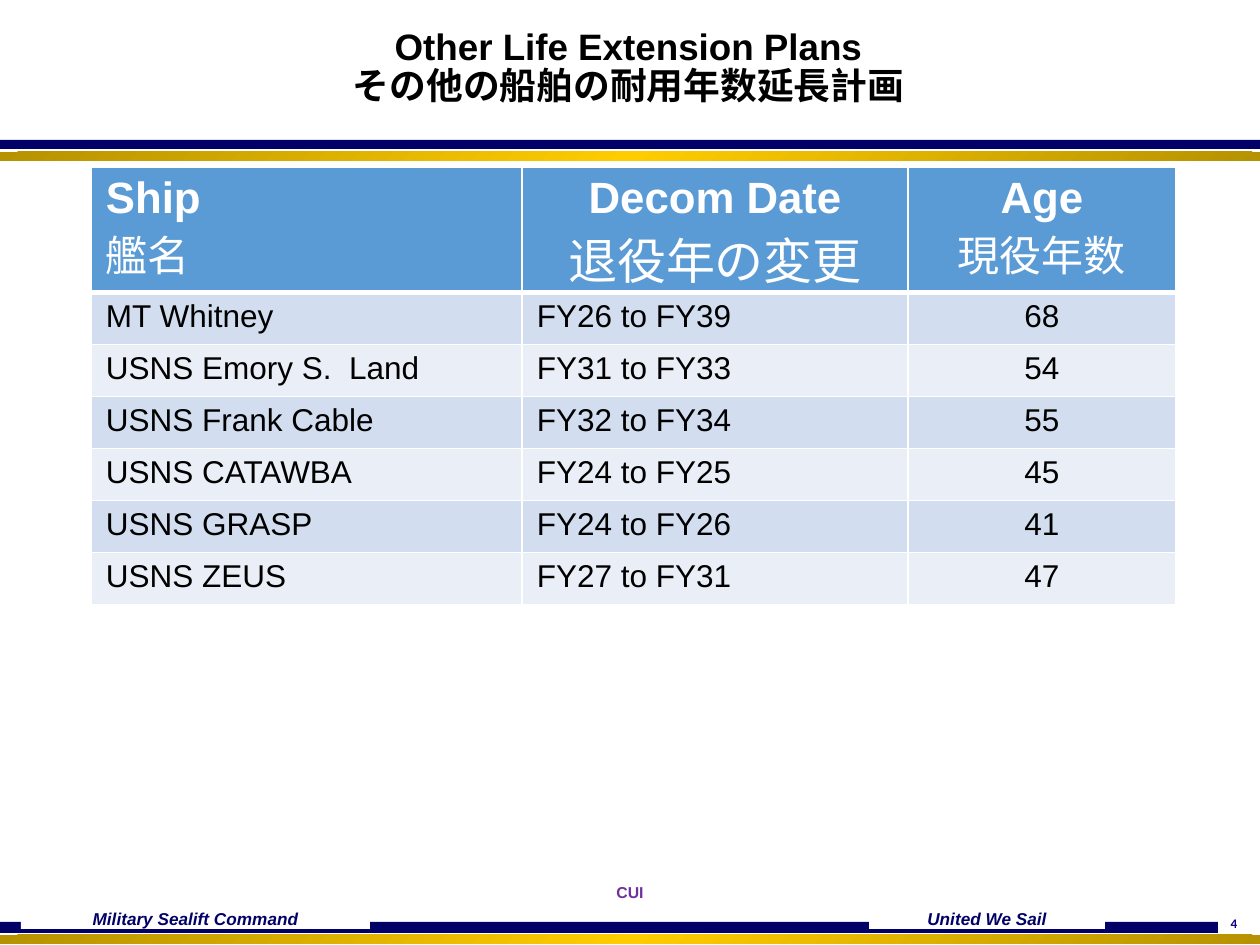
from dataclasses import dataclass

from lxml.etree import SubElement
from pptx import Presentation
from pptx.dml.color import RGBColor
from pptx.enum.shapes import MSO_SHAPE as Shape
from pptx.enum.text import MSO_ANCHOR as Anchor, PP_ALIGN as Align
from pptx.oxml import parse_xml
from pptx.oxml.ns import nsdecls, qn
from pptx.util import Emu, Pt

PX = 914400 / 126
COLORS = {
    "navy": "000066", "gold": "FFCC00", "bronze": "B69200", "white": "FFFFFF",
    "black": "000000", "purple": "7030A0", "number": "110189",
    "header": "5B9BD5", "band": "D2DEEF", "light": "EAEFF7",
}


@dataclass
class Box:
    x: int
    y: int
    w: int
    h: int

    def emu(self) -> list[Emu]:
        return [px(v) for v in (self.x, self.y, self.w, self.h)]


@dataclass
class Style:
    size: float
    color: str = "black"
    bold: bool = False
    italic: bool = False
    name: str = "Arial"
    align: Align = Align.CENTER
    spacing: float = 1.0


@dataclass
class Heading:
    english: str
    japanese: str
    japanese_size: int
    width: int
    align: Align
    body_align: Align


def px(value: int) -> Emu:
    return Emu(round(value * PX))


def rgb(name: str) -> RGBColor:
    return RGBColor.from_string(COLORS[name])


def set_text(p, text: str, style: Style) -> None:
    p.text = text
    p.alignment = style.align
    p.line_spacing = style.spacing
    f = p.font
    f.size, f.name = Pt(style.size), style.name
    f.bold, f.italic = style.bold, style.italic
    f.color.rgb = rgb(style.color)


def add_bar(s, box: Box, color: str):
    sp = s.shapes.add_shape(Shape.RECTANGLE, *box.emu())
    sp.shadow.inherit = False
    sp.line.fill.background()
    sp.fill.solid()
    sp.fill.fore_color.rgb = rgb(color)
    return sp


def add_gold_bar(s, box: Box) -> None:
    sp = add_bar(s, box, "gold")
    stops = "".join(
        f'<a:gs pos="{pos}"><a:srgbClr val="{COLORS[color]}"/></a:gs>'
        for pos, color in ((0, "bronze"), (50000, "gold"), (100000, "bronze")))
    solid = sp.element.spPr.find(qn("a:solidFill"))
    solid.getparent().replace(solid, parse_xml(
        f'<a:gradFill {nsdecls("a")} rotWithShape="1"><a:gsLst>{stops}</a:gsLst>'
        '<a:lin ang="2700000" scaled="1"/></a:gradFill>'))


def add_label(s, box: Box, text: str) -> None:
    tf = add_bar(s, box, "white").text_frame
    tf.word_wrap = True
    tf.vertical_anchor = Anchor.MIDDLE
    tf.margin_top = tf.margin_bottom = 0
    set_text(tf.paragraphs[0], text, Style(9.8, "navy", bold=True, italic=True))


def add_text(s, box: Box, text: str, style: Style, anchor=Anchor.TOP, wrap=True) -> None:
    tf = s.shapes.add_textbox(*box.emu()).text_frame
    tf.word_wrap = wrap
    tf.vertical_anchor = anchor
    set_text(tf.paragraphs[0], text, style)


def format_cell(cell, fill: str, top: int, bottom: int) -> None:
    cell.margin_left = cell.margin_right = px(15)
    cell.margin_top = cell.margin_bottom = px(7)
    cell.fill.solid()
    cell.fill.fore_color.rgb = rgb(fill)
    tcPr = cell._tc.get_or_add_tcPr()
    for i, (side, width) in enumerate(zip("LRTB", (1, 1, top, bottom))):
        ln = SubElement(tcPr, qn(f"a:ln{side}"), w=str(Pt(width)))
        SubElement(SubElement(ln, qn("a:solidFill")), qn("a:srgbClr"), val=COLORS["white"])
        tcPr.insert(i, ln)


def add_ship_table(s, x: int, y: int, headings: list[Heading], ships: list[tuple]) -> None:
    head_h, row_h = 118, 52
    box = Box(x, y, sum(h.width for h in headings), head_h + row_h * len(ships))
    table = s.shapes.add_table(len(ships) + 1, len(headings), *box.emu()).table
    table.first_row = table.horz_banding = False
    for i, row in enumerate(table.rows):
        row.height = px(row_h if i else head_h)

    for c, head in enumerate(headings):
        table.columns[c].width = px(head.width)
        # Bilingual heading
        cell = table.cell(0, c)
        format_cell(cell, "header", top=1, bottom=3)
        tf = cell.text_frame
        set_text(tf.paragraphs[0], head.english,
                 Style(25, "white", bold=True, align=head.align))
        set_text(tf.add_paragraph(), head.japanese,
                 Style(head.japanese_size, "white", name="Calibri", align=head.align))
        # Banded ship rows
        for r, ship in enumerate(ships, start=1):
            cell = table.cell(r, c)
            format_cell(cell, "band" if r % 2 else "light", top=3 if r == 1 else 1, bottom=1)
            set_text(cell.text_frame.paragraphs[0], ship[c], Style(18, align=head.body_align))


HEADINGS = [
    Heading("Ship", "艦名", 24, 431, Align.LEFT, Align.LEFT),
    Heading("Decom Date", "退役年の変更", 28, 386, Align.CENTER, Align.LEFT),
    Heading("Age", "現役年数", 24, 268, Align.CENTER, Align.CENTER),
]
SHIPS = [
    ("MT Whitney", "FY26 to FY39", "68"),
    ("USNS Emory S.  Land", "FY31 to FY33", "54"),
    ("USNS Frank Cable", "FY32 to FY34", "55"),
    ("USNS CATAWBA", "FY24 to FY25", "45"),
    ("USNS GRASP", "FY24 to FY26", "41"),
    ("USNS ZEUS", "FY27 to FY31", "47"),
]


def main() -> None:
    prs = Presentation()
    prs.slide_width, prs.slide_height = px(1260), px(945)
    s = prs.slides.add_slide(prs.slide_layouts[6])

    # Header rules
    add_bar(s, Box(0, 140, 1260, 9), "navy")
    add_gold_bar(s, Box(0, 152, 1260, 9))

    # Footer
    add_text(s, Box(1213, 912, 42, 25), "4",
             Style(7.5, "number", bold=True, name="Calibri", spacing=0.8), wrap=False)
    add_bar(s, Box(0, 922, 1218, 11), "navy")
    add_gold_bar(s, Box(0, 935, 1260, 9))
    add_label(s, Box(21, 909, 349, 20), "Military Sealift Command")
    add_label(s, Box(869, 909, 236, 20), "United We Sail")
    add_text(s, Box(0, 879, 1260, 42), "CUI", Style(9, "purple", bold=True, spacing=0.9))

    # Title
    add_text(s, Box(0, 0, 1257, 136), "Other Life Extension Plans\vその他の船舶の耐用年数延長計画",
             Style(21, bold=True, spacing=0.9), Anchor.MIDDLE)

    # Ship table
    add_ship_table(s, 91, 167, HEADINGS, SHIPS)
    prs.save("out.pptx")


if __name__ == "__main__":
    main()
